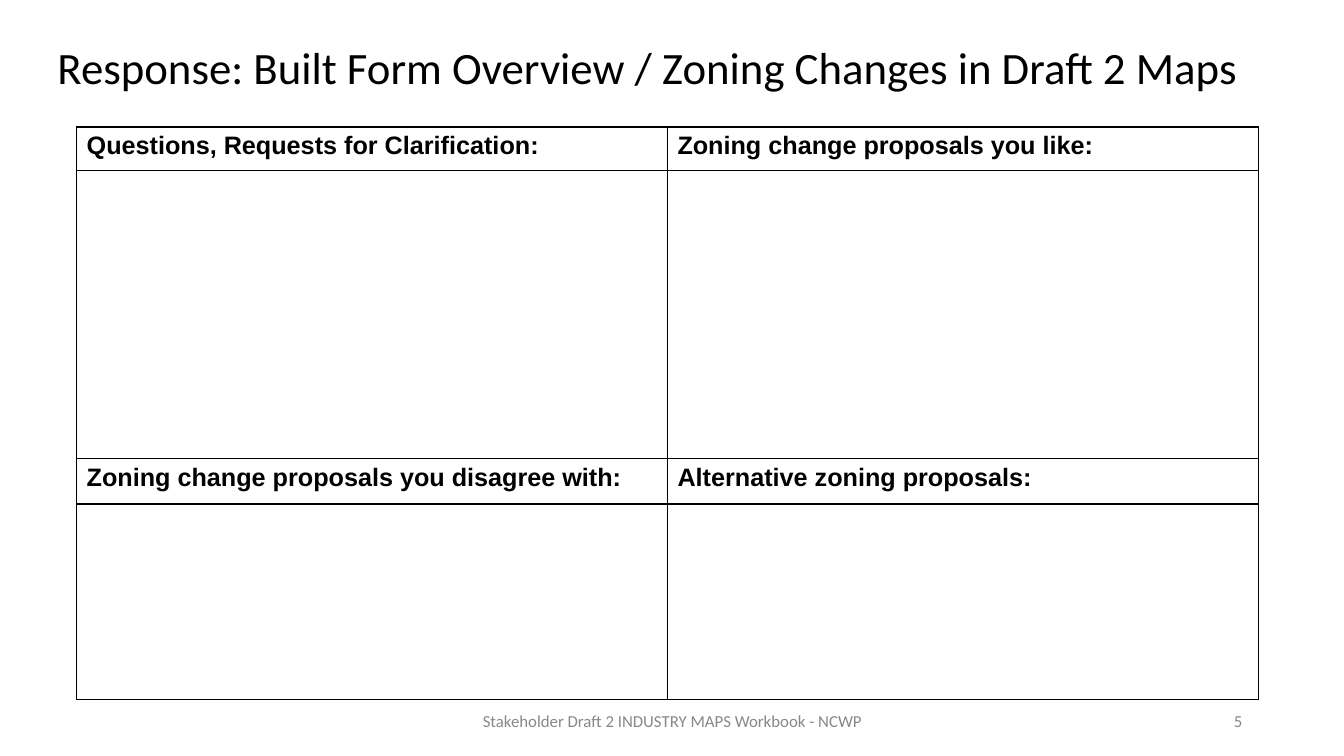
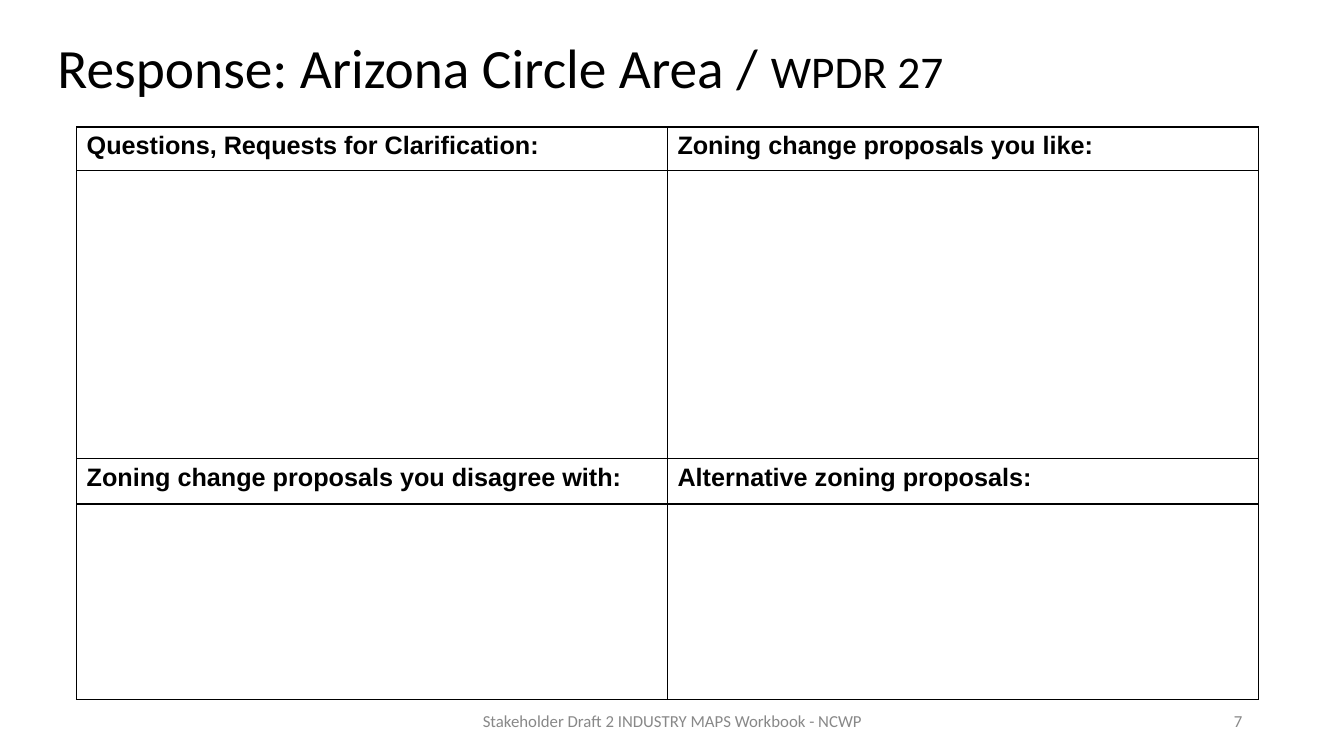
from dataclasses import dataclass

import lxml.etree
import pptx
import pptx.dml.color
import pptx.enum.text
import pptx.oxml.ns
import pptx.util

Inches = pptx.util.Inches
Align = pptx.enum.text.PP_ALIGN


@dataclass(frozen=True)
class Theme:
    ink: str = "000000"
    muted: str = "888888"
    title_font: str = "Calibri"
    table_font: str = "Arial"
    label_size: float = 18
    footer_size: float = 12
    border_width: float = 1


THEME = Theme()

# Boxes are left, top, width, height in inches
TITLE_BOX = (0.47, 0.4, 11.95, 0.59)
TABLE_BOX = (0.76, 1.26, 11.72, 5.68)
FOOTER_BOX = (4.42, 6.95, 4.5, 0.4)
NUMBER_BOX = (9.42, 6.95, 3, 0.4)
ROW_HEIGHTS = (0.43, 2.86, 0.45, 1.94)

FOOTER_TEXT = "Stakeholder Draft 2 INDUSTRY MAPS Workbook - NCWP"
LABELS = {
    0: ("Questions, Requests for Clarification:", "Zoning change proposals you like:"),
    2: ("Zoning change proposals you disagree with:", "Alternative zoning proposals:"),
}

# Page number and title runs, each run with its size
SLIDES = (
    (5, [("Response: Built Form Overview / Zoning Changes in Draft 2 Maps", 32)]),
    (7, [("Response: Arizona Circle Area / ", 39.6), ("WPDR 27", 32.4)]),
)


def style_run(run, font, size, color, bold=False):
    run.font.name = font
    run.font.size = pptx.util.Pt(size)
    run.font.bold = bold
    run.font.color.rgb = pptx.dml.color.RGBColor.from_string(color)


def set_frame(text_frame):
    text_frame.word_wrap = True
    text_frame.auto_size = pptx.enum.text.MSO_AUTO_SIZE.NONE
    text_frame.vertical_anchor = pptx.enum.text.MSO_ANCHOR.MIDDLE


def place_title(slide, box, runs):
    title = slide.shapes.title
    title.left, title.top, title.width, title.height = map(Inches, box)
    set_frame(title.text_frame)
    paragraph = title.text_frame.paragraphs[0]
    paragraph.alignment = Align.LEFT
    paragraph.line_spacing = 0.9
    for text, size in runs:
        run = paragraph.add_run()
        run.text = text
        style_run(run, THEME.title_font, size, THEME.ink)


def add_footer_text(slide, box, text, alignment):
    shape = slide.shapes.add_textbox(*map(Inches, box))
    set_frame(shape.text_frame)
    paragraph = shape.text_frame.paragraphs[0]
    paragraph.text = text
    paragraph.alignment = alignment
    style_run(paragraph.runs[0], THEME.title_font, THEME.footer_size, THEME.muted)


def set_borders(cell):
    properties = cell._tc.get_or_add_tcPr()
    qn = pptx.oxml.ns.qn
    for side in ("a:lnL", "a:lnR", "a:lnT", "a:lnB"):
        line = lxml.etree.SubElement(properties, qn(side))
        line.set("w", str(pptx.util.Pt(THEME.border_width)))
        fill = lxml.etree.SubElement(line, qn("a:solidFill"))
        lxml.etree.SubElement(fill, qn("a:srgbClr")).set("val", THEME.ink)


def add_response_table(slide, box, row_heights, labels):
    column_count = 2
    table = slide.shapes.add_table(len(row_heights), column_count, *map(Inches, box)).table
    table.first_row = False
    table.horz_banding = False
    for column in table.columns:
        column.width = Inches(box[2] / column_count)
    for row, height in zip(table.rows, row_heights):
        row.height = Inches(height)
    for cell in table.iter_cells():
        set_borders(cell)
        cell.fill.background()
    # Label rows sit above the blank answer rows
    for row_index, texts in labels.items():
        for column_index, text in enumerate(texts):
            paragraph = table.cell(row_index, column_index).text_frame.paragraphs[0]
            paragraph.text = text
            style_run(paragraph.runs[0], THEME.table_font, THEME.label_size, THEME.ink, True)


def add_response_slide(presentation, page_number, title_runs):
    slide = presentation.slides.add_slide(presentation.slide_layouts.get_by_name("Title Only"))
    place_title(slide, TITLE_BOX, title_runs)
    add_footer_text(slide, FOOTER_BOX, FOOTER_TEXT, Align.CENTER)
    add_footer_text(slide, NUMBER_BOX, str(page_number), Align.RIGHT)
    add_response_table(slide, TABLE_BOX, ROW_HEIGHTS, LABELS)


def main():
    presentation = pptx.Presentation()
    presentation.slide_width = Inches(13.33)
    presentation.slide_height = Inches(7.5)
    for page_number, title_runs in SLIDES:
        add_response_slide(presentation, page_number, title_runs)
    presentation.save("out.pptx")


if __name__ == "__main__":
    main()
